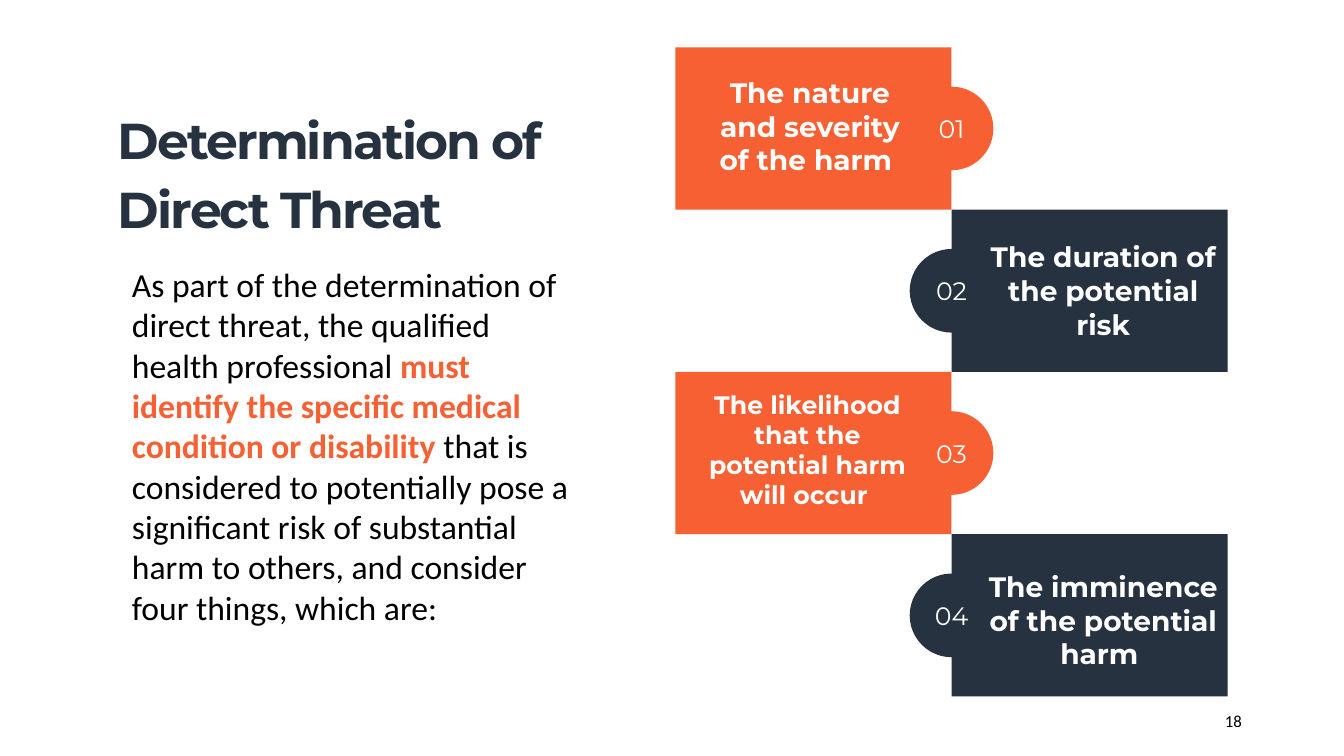
from pptx import Presentation
from pptx.dml.color import RGBColor
from pptx.enum.shapes import MSO_SHAPE
from pptx.enum.text import MSO_ANCHOR, MSO_AUTO_SIZE, PP_ALIGN
from pptx.util import Inches, Pt

RECT, OVAL = MSO_SHAPE.RECTANGLE, MSO_SHAPE.OVAL
TOP, MID = MSO_ANCHOR.TOP, MSO_ANCHOR.MIDDLE
LEFT, MIDST, RIGHT = PP_ALIGN.LEFT, PP_ALIGN.CENTER, PP_ALIGN.RIGHT
FIXED = MSO_AUTO_SIZE.NONE

ORANGE = RGBColor(0xF7, 0x60, 0x33)
NAVY = RGBColor(0x26, 0x32, 0x40)
WHITE = RGBColor(0xFF, 0xFF, 0xFF)
BLACK = RGBColor(0, 0, 0)

WIDE, HIGH = Inches(13.33), Inches(7.5)
COLS, ROWS = 40, 30
HEAD, BODY = "Montserrat", "Calibri"


def write(frame, parts, size=20, font=HEAD, color=WHITE, bold=False,
          align=MIDST, anchor=TOP, lead=None, track=None):
    """Fill a text frame with plain strings or (text, color, bold) parts."""
    frame.word_wrap = True
    frame.auto_size = FIXED
    frame.vertical_anchor = anchor
    para = frame.paragraphs[0]
    para.alignment = align
    if lead:
        para.line_spacing = lead
    for part in parts:
        text, tint, heavy = (part, color, bold) if isinstance(part, str) else part
        run = para.add_run()
        run.text = text
        run.font.name = font
        run.font.size = Pt(size)
        run.font.bold = heavy
        run.font.color.rgb = tint
        if track:
            run.font._element.set("spc", str(track))


class Deck:
    """Holds the grid and the current slide, and draws each kind of element."""

    def __init__(self):
        self.prs = Presentation()
        self.prs.slide_width, self.prs.slide_height = WIDE, HIGH
        self.slide = self.prs.slides.add_slide(self.prs.slide_layouts[5])

    def place(self, x, y, w, h):
        return (round(WIDE * x / COLS), round(HIGH * y / ROWS),
                round(WIDE * w / COLS), round(HIGH * h / ROWS))

    def title(self, text, *box):
        head = self.slide.shapes.title
        head.left, head.top, head.width, head.height = self.place(*box)
        write(head.text_frame, [text], size=36, color=NAVY, bold=True,
              align=LEFT, lead=1.14, track=-140)

    def text(self, parts, *box, **style):
        area = self.slide.shapes.add_textbox(*self.place(*box))
        write(area.text_frame, parts, **style)

    def shape(self, kind, color, *box):
        form = self.slide.shapes.add_shape(kind, *self.place(*box))
        form.shadow.inherit = False
        form.fill.solid()
        form.fill.fore_color.rgb = color
        form.line.fill.background()
        return form

    def badge(self, text, color, *box):
        disc = self.shape(OVAL, color, *box)
        write(disc.text_frame, [text], size=18, anchor=MID)


def main():
    deck = Deck()
    deck.title("Determination of Direct Threat", 3.21, 3.8, 14.19, 6.32)
    deck.text([
        "As part of the determination of direct threat, the qualified health professional ",
        ("must identify the specific medical condition or disability", ORANGE, True),
        " that is considered to potentially pose a significant risk of substantial "
        "harm to others, and consider four things, which are:",
    ], 3.63, 10.28, 13.98, 16.16, size=24, font=BODY, color=BLACK, align=LEFT)

    left, top, wide, high = 20.1, 1.88, 8.22, 6.44
    disc_w, disc_h = 2.49, 3.32
    spine = left + wide
    factors = [
        ("The nature and severity of the harm ", 20.64, 0.92, 6.93, 20),
        ("The duration of the potential risk", 29.1, 1, 7.47, 20),
        ("The likelihood that the potential harm will occur ", 20.49, 0.48, 7.08, 18),
        ("The imminence of the potential harm ", 29.1, 1.2, 7.47, 20),
    ]
    for i, (label, x, drop, span, size) in enumerate(factors):
        side = i % 2
        color = (ORANGE, NAVY)[side]
        y = top + i * high
        deck.shape(RECT, color, left + side * wide, y, wide, high)
        deck.badge(f"{i + 1:02}", color, spine - disc_w / 2,
                   y + (high - disc_h) / 2, disc_w, disc_h)
        deck.text([label], x, y + drop, span, 4.44, size=size, bold=True)

    deck.text(["18"], 28.26, 27.8, 9, 1.6, size=12, font=BODY, color=BLACK,
              align=RIGHT, anchor=MID)
    deck.prs.save("out.pptx")


if __name__ == "__main__":
    main()
